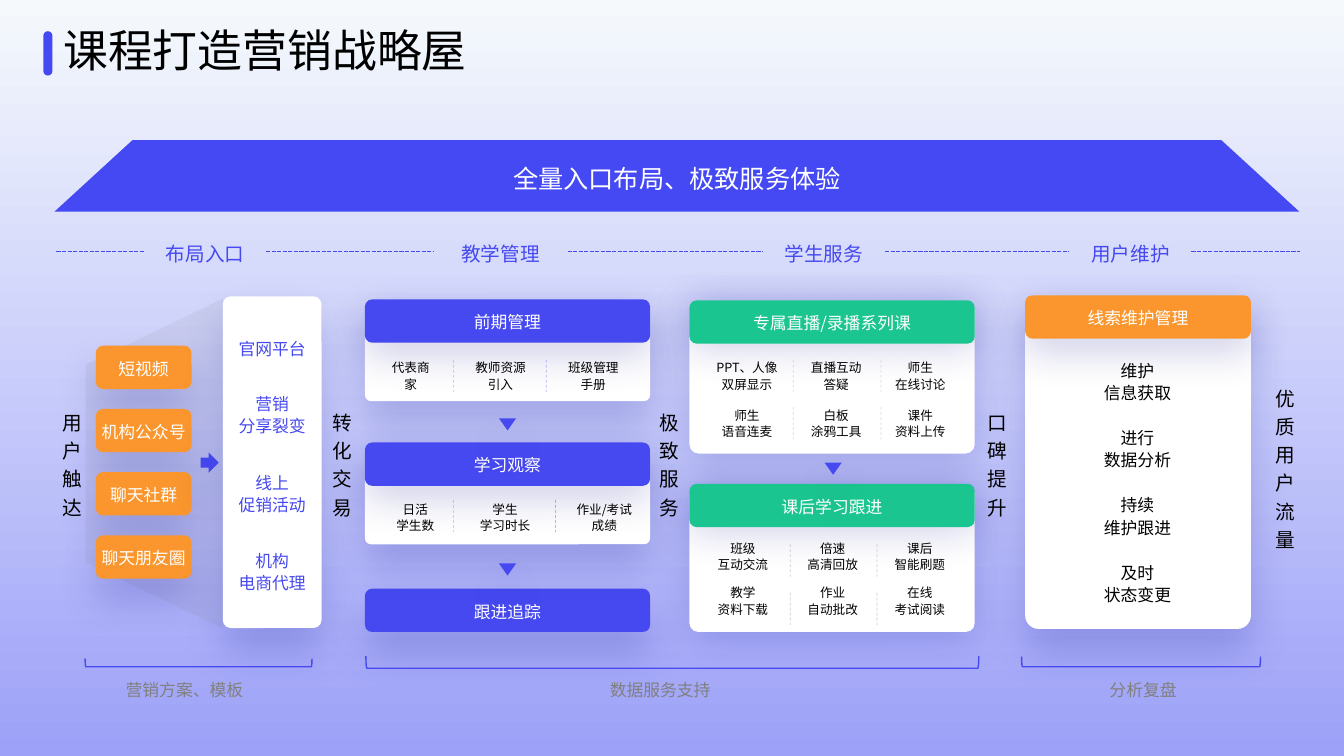
from dataclasses import dataclass

from lxml import etree
from pptx import Presentation
from pptx.dml.color import RGBColor
from pptx.enum.dml import MSO_LINE
from pptx.enum.shapes import MSO_CONNECTOR, MSO_SHAPE
from pptx.enum.text import MSO_ANCHOR, MSO_AUTO_SIZE, PP_ALIGN
from pptx.oxml.ns import qn
from pptx.util import Inches, Pt

ROUND, TRIANGLE, ARROW = MSO_SHAPE.ROUNDED_RECTANGLE, MSO_SHAPE.ISOSCELES_TRIANGLE, MSO_SHAPE.RIGHT_ARROW
TRAPEZOID, BRACKET, FAN = MSO_SHAPE.TRAPEZOID, MSO_SHAPE.LEFT_BRACKET, MSO_SHAPE.FLOWCHART_MANUAL_OPERATION
STRAIGHT = MSO_CONNECTOR.STRAIGHT
DASH, SYS_DASH = MSO_LINE.DASH, MSO_LINE.SQUARE_DOT
LEFT, CENTER = PP_ALIGN.LEFT, PP_ALIGN.CENTER
MIDDLE, GROW = MSO_ANCHOR.MIDDLE, MSO_AUTO_SIZE.SHAPE_TO_FIT_TEXT
COLUMNS, ROWS = 133.33, 75
CELL = Inches(0.1)


@dataclass(frozen=True)
class Theme:
    font: str = "Noto Sans CJK SC"
    sky: str = "F5F9FC"
    dusk: str = "9DA1F8"
    roof: str = "4449F4"
    blue: str = "4649EF"
    orange: str = "FA962D"
    green: str = "1BC58F"
    white: str = "FFFFFF"
    black: str = "000000"
    gray: str = "808080"
    silver: str = "A6A6A6"
    shadow: str = "0C0F8E"
    title: int = 32
    slogan: int = 18
    stage: int = 14
    body: int = 12
    detail: int = 9


THEME = Theme()


@dataclass(frozen=True)
class Box:
    x: float
    y: float
    w: float
    h: float

    def area(self, x, y, w, h):
        return Box(self.x + x, self.y + y, w, h)

    def turned(self):
        return self.area((self.w - self.h) / 2, (self.h - self.w) / 2, self.h, self.w)

    def emu(self):
        return [round(n * CELL) for n in (self.x, self.y, self.w, self.h)]


def set_values(target, values):
    for key, value in values.items():
        setattr(target, key, value)


def add_xml(parent, tag, **attributes):
    return etree.SubElement(parent, qn(tag), attributes)


def set_alpha(properties, percent):
    colour = next(properties.iter(qn("a:srgbClr")))
    add_xml(colour, "a:alpha", val=str(percent * 1000))


def write(frame, text, size, colour, align=CENTER, spacing=1.1):
    frame.text = text
    for paragraph in frame.paragraphs:
        set_values(paragraph, {"alignment": align, "line_spacing": spacing})
        for run in paragraph.runs:
            set_values(run.font, {"size": Pt(size), "name": THEME.font})
            run.font.color.rgb = RGBColor.from_string(colour)
            add_xml(run._r.get_or_add_rPr(), "a:ea", typeface=THEME.font)


def label(slide, box, text, size, colour, wrap=True, **style):
    caption = slide.shapes.add_textbox(*box.emu())
    set_values(caption.text_frame, {"word_wrap": wrap, "auto_size": GROW})
    write(caption.text_frame, text, size, colour, **style)
    return caption


def block(slide, preset, box, fill=None, adjust=(), turn=0, drop=None, text="", size=THEME.body):
    shape = slide.shapes.add_shape(preset, *box.emu())
    set_values(shape, {"rotation": turn})
    shape.shadow.inherit = False
    for index, value in enumerate(adjust):
        shape.adjustments[index] = value
    if fill:
        shape.fill.solid()
        shape.fill.fore_color.rgb = RGBColor.from_string(fill)
        shape.line.fill.background()
    else:
        shape.fill.background()
        shape.line.color.rgb = RGBColor.from_string(THEME.blue)
        shape.line.width = Pt(1)
    if drop:
        effects = shape._element.spPr.find(qn("a:effectLst"))
        shade = add_xml(effects, "a:outerShdw", blurRad=str(Pt(29)), dist=str(Pt(drop)),
                        dir="5400000", algn="t", rotWithShape="0")
        add_xml(shade, "a:srgbClr", val=THEME.shadow)
        set_alpha(shade, 18)
    if text:
        set_values(shape.text_frame, {"margin_left": 0, "margin_right": 0, "margin_top": 0,
                                      "margin_bottom": 0, "vertical_anchor": MIDDLE, "word_wrap": True})
        write(shape.text_frame, text, size, THEME.white)
    return shape


def rule(slide, start, end, colour, width, dash, alpha=None):
    line = slide.shapes.add_connector(STRAIGHT, *[round(n * CELL) for n in (*start, *end)])
    line.line.color.rgb = RGBColor.from_string(colour)
    set_values(line.line, {"width": Pt(width), "dash_style": dash})
    properties = line._element.spPr
    if alpha:
        set_alpha(properties, alpha)
    add_xml(properties, "a:effectLst")
    return line


def title(slide, box, text):
    label(slide, box.area(1, 0, 42.4, 6.4), text, THEME.title, THEME.black, wrap=False, align=LEFT, spacing=1)
    block(slide, ROUND, box.area(0, 1.3, 0.9, 4.4), THEME.roof, [0.5])


def stages(slide, box, names):
    spans = [(8.7, 12.1), (37.4, 13.3), (70.1, 12.1), (100.5, 12.1)]
    captions = [label(slide, box.area(x, 0, w, box.h), name, THEME.stage, THEME.blue)
                for (x, w), name in zip(spans, names)]
    starts = [0] + [x + w for x, w in spans]
    ends = [x for x, _ in spans] + [box.w]
    middle = box.y + box.h / 2
    for before, after, start, end in zip([None] + captions, captions + [None], starts, ends):
        line = rule(slide, (box.x + start, middle), (box.x + end, middle), THEME.blue, 1, SYS_DASH)
        if before:
            line.begin_connect(before, 3)
        if after:
            line.end_connect(after, 1)


def entrances(slide, box, platforms, channels):
    fan = block(slide, FAN, box.area(-1, 0.25, 13.6, 32.7).turned(), THEME.gray, turn=90)
    set_alpha(fan._element.spPr, 10)
    for row, name in enumerate(platforms):
        block(slide, ROUND, box.area(0, 4.9 + 6.27 * row, 9.5, 4.3), THEME.orange, drop=16, text=name)
    block(slide, ARROW, box.area(10.4, 15.5, 1.8, 2), THEME.blue, [0.5, 0.56], drop=16)
    block(slide, ROUND, box.area(12.6, 0, 9.8, box.h), THEME.white, [0.08], drop=16)
    for top, name in zip((3.5, 9, 16.8, 24.5), channels):
        label(slide, box.area(12.1, top, 10.8, 5.1), name, THEME.body, THEME.blue)


def panel(slide, box, heading, fill, drops):
    block(slide, ROUND, box.area(0, 0.1, box.w, box.h - 0.1), THEME.white, [0.06], drop=drops[0])
    block(slide, ROUND, box.area(0, 0, box.w, 4.3), fill, drop=drops[1], text=heading)


def detail_panel(slide, box, heading, fill, drops, rows, columns, dividers, tops, pitches, ink):
    panel(slide, box, heading, fill, drops)
    for row, names in enumerate(rows):
        for (x, w), name in zip(columns, names):
            label(slide, box.area(x, tops[0] + pitches[0] * row, w, 4.1), name, THEME.detail, THEME.black)
        top = box.y + tops[1] + pitches[1] * row
        for x in dividers:
            rule(slide, (box.x + x, top), (box.x + x, top + 3.2), ink, 0.5, DASH, 40)


def maintenance(slide, box, heading, steps):
    panel(slide, box, heading, THEME.orange, (16, 10))
    for row, step in enumerate(steps):
        label(slide, box.area(1.1, 5.8 + 6.67 * row, 20.1, 5.3), step, THEME.body, THEME.black)


def support(slide, box, name, shift):
    block(slide, BRACKET, box.turned(), turn=270)
    caption = Box(box.x + box.w / 2 + shift - 8.9, 66.7, 17.8, 3)
    label(slide, caption, name, THEME.body, THEME.gray)


def strategy_house(slide, box):
    fill = slide.background.fill
    fill.gradient()
    fill.gradient_angle = 270
    for stop, colour in zip(fill.gradient_stops, (THEME.sky, THEME.dusk)):
        stop.color.rgb = RGBColor.from_string(colour)
    title(slide, box.area(4.3, 1.8, 43.4, 6.4), "课程打造营销战略屋")
    block(slide, TRAPEZOID, box.area(5.4, 13.9, 123.5, 7.1), THEME.roof, [1.09],
          text="全量入口布局、极致服务体验", size=THEME.slogan)
    stages(slide, box.area(5.6, 23.3, 123.4, 3.3), ["布局入口", "教学管理", "学生服务", "用户维护"])
    entrances(slide, box.area(9.5, 29.4, 22.4, 32.9), ["短视频", "机构公众号", "聊天社群", "聊天朋友圈"],
              ["官网平台", "营销\n分享裂变", "线上\n促销活动", "机构\n电商代理"])
    block(slide, ROUND, box.area(36.2, 58.4, 28.3, 4.3), THEME.blue, drop=16, text="跟进追踪")
    detail_panel(slide, box.area(36.2, 29.7, 28.3, 10.1), "前期管理", THEME.blue, (16, 10),
                 [["代表商家", "教师资源引入", "班级管理手册"]],
                 [(1.3, 6.5), (9.9, 7.1), (19.1, 7.1)], (8.8, 18), (5.4, 6), (0, 0), THEME.blue)
    detail_panel(slide, box.area(36.2, 43.9, 28.3, 10.1), "学习观察", THEME.blue, (16, 10),
                 [["日活\n学生数", "学生\n学习时长", "作业/考试\n成绩"]],
                 [(1.3, 7.4), (9, 9.8), (19.1, 9.3)], (8.8, 18.9), (5.2, 5.7), (0, 0), THEME.blue)
    detail_panel(slide, box.area(68.4, 29.8, 28.3, 15.2), "专属直播/录播系列课", THEME.green, (4, 4),
                 [["PPT、人像\n双屏显示", "直播互动答疑", "师生\n在线讨论"],
                  ["师生\n语音连麦", "白板\n涂鸦工具", "课件\n资料上传"]],
                 [(1, 9.4), (11, 7.1), (18.8, 8.2)], (10.3, 19), (5.3, 5.9), (4.7, 4.7), THEME.silver)
    detail_panel(slide, box.area(68.4, 48, 28.3, 14.7), "课后学习跟进", THEME.green, (4, 4),
                 [["班级\n互动交流", "倍速\n高清回放", "课后\n智能刷题"],
                  ["教学\n资料下载", "作业\n自动批改", "在线\n考试阅读"]],
                 [(1, 8.6), (9.3, 9.8), (18.2, 9.3)], (10, 18.6), (5, 6), (4.4, 4.8), THEME.gray)
    maintenance(slide, box.area(101.7, 29.3, 22.4, 33.1), "线索维护管理",
                ["维护\n信息获取", "进行\n数据分析", "持续\n维护跟进", "及时\n状态变更"])
    for x, y in ((49.5, 41.5), (49.5, 55.9), (81.8, 45.9)):
        block(slide, TRIANGLE, box.area(x, y, 1.7, 1.2), THEME.blue, turn=180, drop=16)
    for x, y, name in ((5.2, 39.8, "用户触达"), (32, 39.8, "转化交易"), (64.4, 39.8, "极致服务"),
                       (97, 39.8, "口碑提升"), (125.6, 37.4, "优质用户流量")):
        label(slide, box.area(x, y, 3.9, 3 * len(name)), name, THEME.stage, THEME.black, spacing=1.2)
    support(slide, box.area(8.45, 65.35, 22.5, 0.8), "营销方案、模板", -1.4)
    support(slide, box.area(36.3, 65.1, 60.8, 1.2), "数据服务支持", -1.2)
    support(slide, box.area(101.35, 65.15, 23.7, 1), "分析复盘", 0.2)


def main():
    deck = Presentation()
    set_values(deck, {"slide_width": round(COLUMNS * CELL), "slide_height": ROWS * CELL})
    strategy_house(deck.slides.add_slide(deck.slide_layouts[6]), Box(0, 0, COLUMNS, ROWS))
    deck.save("out.pptx")


if __name__ == "__main__":
    main()
